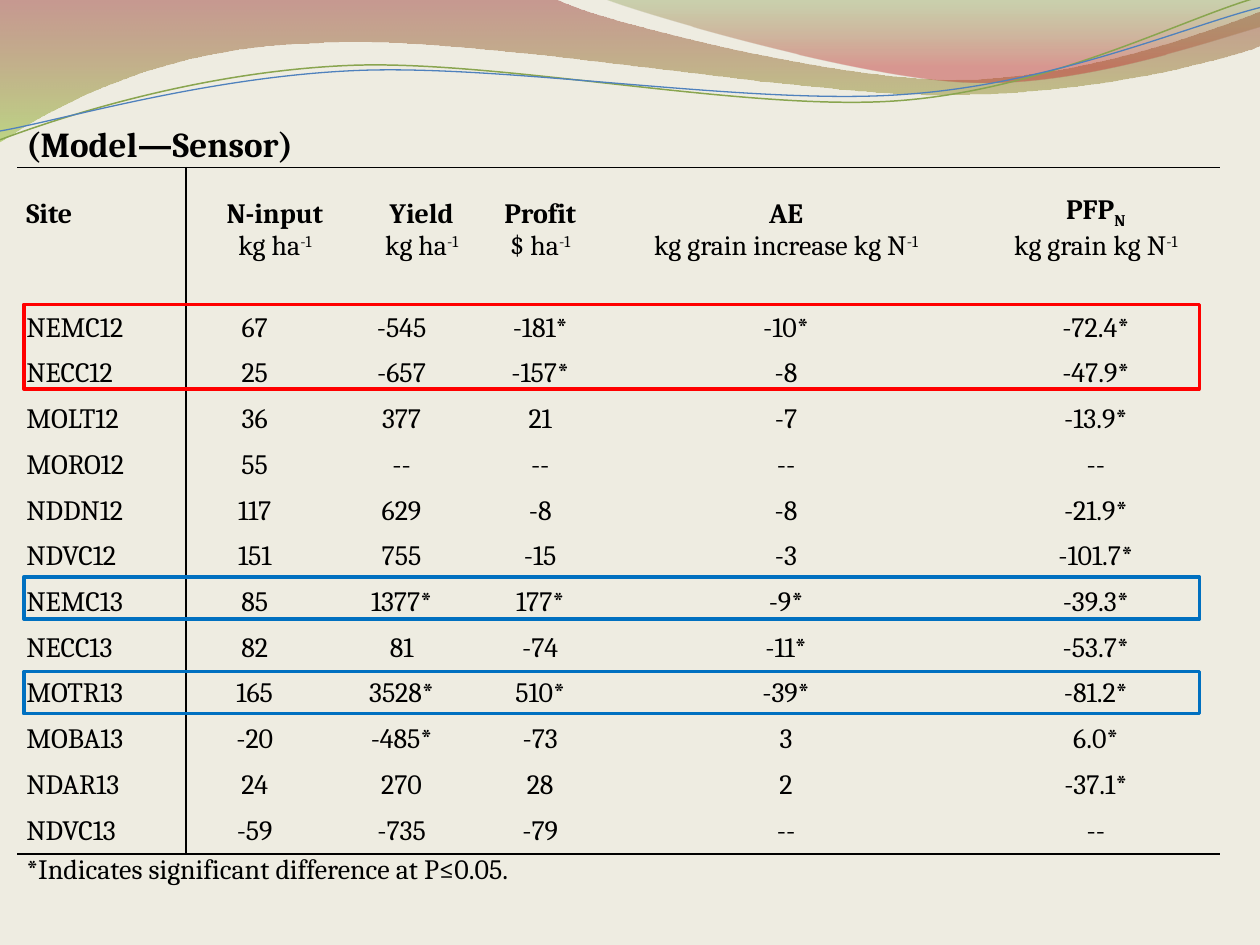
import pptx
import pptx.util
import pptx.dml.color
import pptx.enum.shapes
import pptx.enum.text
import pptx.oxml
import pptx.oxml.ns
from lxml import etree

Cm, Pt = pptx.util.Cm, pptx.util.Pt
RGB = pptx.dml.color.RGBColor
ALIGN, ANCHOR = pptx.enum.text.PP_ALIGN, pptx.enum.text.MSO_ANCHOR
qn = pptx.oxml.ns.qn

BLACK = RGB(0, 0, 0)
CREAM = RGB(0xEE, 0xEC, 0xE1)
RED = RGB(0xFF, 0, 0)
BLUE = RGB(0, 0x70, 0xC0)
MAROON = RGB(0x97, 0x33, 0x30)
LIME = RGB(0x95, 0xC2, 0x38)
OLIVE = RGB(0x76, 0x95, 0x37)
ROSE = RGB(0xBE, 0x33, 0x30)
GREEN = RGB(0x89, 0xA5, 0x4F)
SKY = RGB(0x4F, 0x81, 0xBD)

FONT = "Cambria"
TITLE = "(Model—Sensor)"
NOTE = "*Indicates significant difference at P≤0.05."
# ^ marks a superscript, _ a subscript
HEADS = ["Site", "N-input", "Yield", "Profit", "AE", "PFP_N"]
UNITS = ["", "kg ha^-1", "kg ha^-1", "$ ha^-1",
         "kg grain increase kg N^-1", "kg grain kg N^-1"]
SITES = [
    ["NEMC12", "67", "-545", "-181*", "-10*", "-72.4*"],
    ["NECC12", "25", "-657", "-157*", "-8", "-47.9*"],
    ["MOLT12", "36", "377", "21", "-7", "-13.9*"],
    ["MORO12", "55", "--", "--", "--", "--"],
    ["NDDN12", "117", "629", "-8", "-8", "-21.9*"],
    ["NDVC12", "151", "755", "-15", "-3", "-101.7*"],
    ["NEMC13", "85", "1377*", "177*", "-9*", "-39.3*"],
    ["NECC13", "82", "81", "-74", "-11*", "-53.7*"],
    ["MOTR13", "165", "3528*", "510*", "-39*", "-81.2*"],
    ["MOBA13", "-20", "-485*", "-73", "3", "6.0*"],
    ["NDAR13", "24", "270", "28", "2", "-37.1*"],
    ["NDVC13", "-59", "-735", "-79", "--", "--"],
]
# top in cm, number of rows framed, colour
MARKS = [(6.14, 2, RED), (11.63, 1, BLUE), (13.54, 1, BLUE)]

LEFT, TOP = 0.35, 2.54
COLS = [3.4, 2.77, 0.81, 2.34, 2.44, 7.47, 5.02]
HEAD_H, BODY_H = [0.84, 1.27, 1.5], 11.07
ROW_H = BODY_H / len(SITES)
HEAD_AT = [0, 1, 3, 4, 5, 6]
SITE_AT = [0, 1, 2, 4, 5, 6]

# Each path in inches: a pair is a line, six numbers are a Bézier curve.
# Gradient stops: position, colour, opacity in percent.
BANDS = [
    ([(0, 0), (4.4, -0.01), (4.76, 0.17, 6.64, 0.63, 7.58, 0.63),
      (8.53, 0.63, 9.58, 0.26, 10, 0.09), (10.01, 0.36),
      (9.83, 0.44, 8.7, 0.76, 7.46, 0.75),
      (6.22, 0.75, 3.82, 0.28, 2.57, 0.34),
      (1.29, 0.36, 0.46, 0.83, -0.01, 1.13)],
     [(0, MAROON, 45), (1, LIME, 55)]),
    ([(4.79, -0.01), (5.09, 0.11, 6.82, 0.62, 7.69, 0.65),
      (8.56, 0.69, 9.61, 0.32, 10, 0.21), (10, 0)],
     [(0, OLIVE, 30), (0.8, ROSE, 45)]),
]
WAVES = [
    ([(0, 1.11), (0.48, 0.93, 1.58, 0.57, 2.77, 0.52),
      (3.95, 0.47, 5.93, 0.89, 7.13, 0.8),
      (8.33, 0.71, 9.38, 0.15, 9.98, -0.02)], GREEN, 0.85),
    ([(0, 1.04), (0.47, 0.96, 1.64, 0.61, 2.83, 0.56),
      (4.03, 0.51, 5.97, 0.84, 7.17, 0.75),
      (8.36, 0.67, 9.41, 0.21, 10, 0.06)], SKY, 0.75),
]


def draw(slide, path, close):
    """Build the outline from its corners, then bend the curved parts."""
    path = [[Cm(2.54 * v) for v in seg] for seg in path]
    pen = slide.shapes.build_freeform(*path[0])
    pen.add_line_segments([seg[-2:] for seg in path[1:]], close=close)
    shape = pen.convert_to_shape()
    shape.shadow.inherit = False
    sides = list(shape._element.iter(qn("a:lnTo")))
    for side, seg in zip(sides, path[1:]):
        if len(seg) == 6:
            bend = etree.Element(qn("a:cubicBezTo"))
            for x, y in zip(seg[::2], seg[1::2]):
                etree.SubElement(bend, qn("a:pt"), x=str(x - shape.left),
                                 y=str(y - shape.top))
            side.getparent().replace(side, bend)
    return shape


def shade(shape, stops):
    shape.line.fill.background()
    shape.fill.gradient()
    shape.fill.gradient_angle = 270
    for stop, (pos, tone, _) in zip(shape.fill.gradient_stops, stops):
        stop.position = pos
        stop.color.rgb = tone
    for clr, (_, _, alpha) in zip(shape._element.iter(qn("a:srgbClr")), stops):
        etree.SubElement(clr, qn("a:alpha"), val=str(alpha * 1000))


def write(cell, text, size=16, bold=False, align=ALIGN.CENTER):
    par = cell.text_frame.paragraphs[0]
    par.alignment = align
    sign = "^" if "^" in text else "_"
    main, _, small = text.partition(sign)
    for part, base in ((main, 0), (small, 30000 if sign == "^" else -25000)):
        if not part:
            continue
        run = par.add_run()
        run.text = part
        font = run.font
        font.name, font.size, font.bold = FONT, Pt(size), bold
        font.color.rgb = BLACK
        if base:
            run._r.get_or_add_rPr().set("baseline", str(base))


def rule(cell, sides):
    """Give each side a black border or none; sides run L, R, T, B."""
    props = cell._tc.get_or_add_tcPr()
    for i, (side, on) in enumerate(sides.items()):
        line = etree.Element(qn("a:ln" + side), w=str(Pt(1)))
        if on:
            fill = etree.SubElement(line, qn("a:solidFill"))
            etree.SubElement(fill, qn("a:srgbClr"), val=str(BLACK))
        else:
            etree.SubElement(line, qn("a:noFill"))
        props.insert(i, line)


def build_table(slide):
    high = HEAD_H + [ROW_H] * (len(SITES) + 1)
    last = len(high) - 1
    table = slide.shapes.add_table(
        len(high), len(COLS), Cm(LEFT), Cm(TOP),
        Cm(sum(COLS)), Cm(sum(high))).table
    table.first_row = table.horz_banding = False
    plain = "{2D5ABB26-0587-4C30-8999-92F81FD0307C}"  # no style, no grid
    table._tbl.tblPr.find(qn("a:tableStyleId")).text = plain
    for col, wide in zip(table.columns, COLS):
        col.width = Cm(wide)
    for row, tall in zip(table.rows, high):
        row.height = Cm(tall)

    for r in range(len(high)):
        for c in range(len(COLS)):
            cell = table.cell(r, c)
            cell.margin_left = cell.margin_right = Cm(0.18)
            cell.margin_top = cell.margin_bottom = 0
            cell.fill.background()
            if r == 1:
                cell.vertical_anchor = ANCHOR.BOTTOM
            elif 3 <= r < last:
                cell.vertical_anchor = ANCHOR.MIDDLE
            inner = 0 < r < last
            rule(cell, {"L": inner and c == 1, "R": inner and c == 0,
                        "T": r in (1, last), "B": r in (0, last - 1)})

    table.cell(0, 0).merge(table.cell(0, 3))
    write(table.cell(0, 0), TITLE, 20, True, ALIGN.LEFT)
    for r, texts in enumerate([HEADS, UNITS] + SITES, 1):
        head = r < 3
        start = 1 if head else 2
        table.cell(r, start).merge(table.cell(r, start + 1))
        for c, text in zip(HEAD_AT if head else SITE_AT, texts):
            write(table.cell(r, c), text, bold=r == 1,
                  align=ALIGN.CENTER if c else ALIGN.LEFT)
    table.cell(last, 0).merge(table.cell(last, len(COLS) - 1))
    write(table.cell(last, 0), NOTE, align=ALIGN.LEFT)


def main():
    deck = pptx.Presentation()
    deck.slide_width, deck.slide_height = Cm(25.4), Cm(19.05)
    slide = deck.slides.add_slide(deck.slide_layouts[6])
    slide.background.fill.solid()
    slide.background.fill.fore_color.rgb = CREAM

    for path, stops in BANDS:
        shade(draw(slide, path, True), stops)
    for path, tone, width in WAVES:
        wave = draw(slide, path, False)
        wave.fill.background()
        wave.line.color.rgb = tone
        wave.line.width = Pt(width)

    build_table(slide)
    for top, count, tone in MARKS:
        box = slide.shapes.add_shape(
            pptx.enum.shapes.MSO_SHAPE.RECTANGLE,
            Cm(0.48), Cm(top), Cm(23.7), Cm(0.85 * count))
        box.shadow.inherit = False
        box.fill.background()
        box.line.color.rgb = tone
        box.line.width = Pt(2)
    deck.save("out.pptx")


if __name__ == "__main__":
    main()
